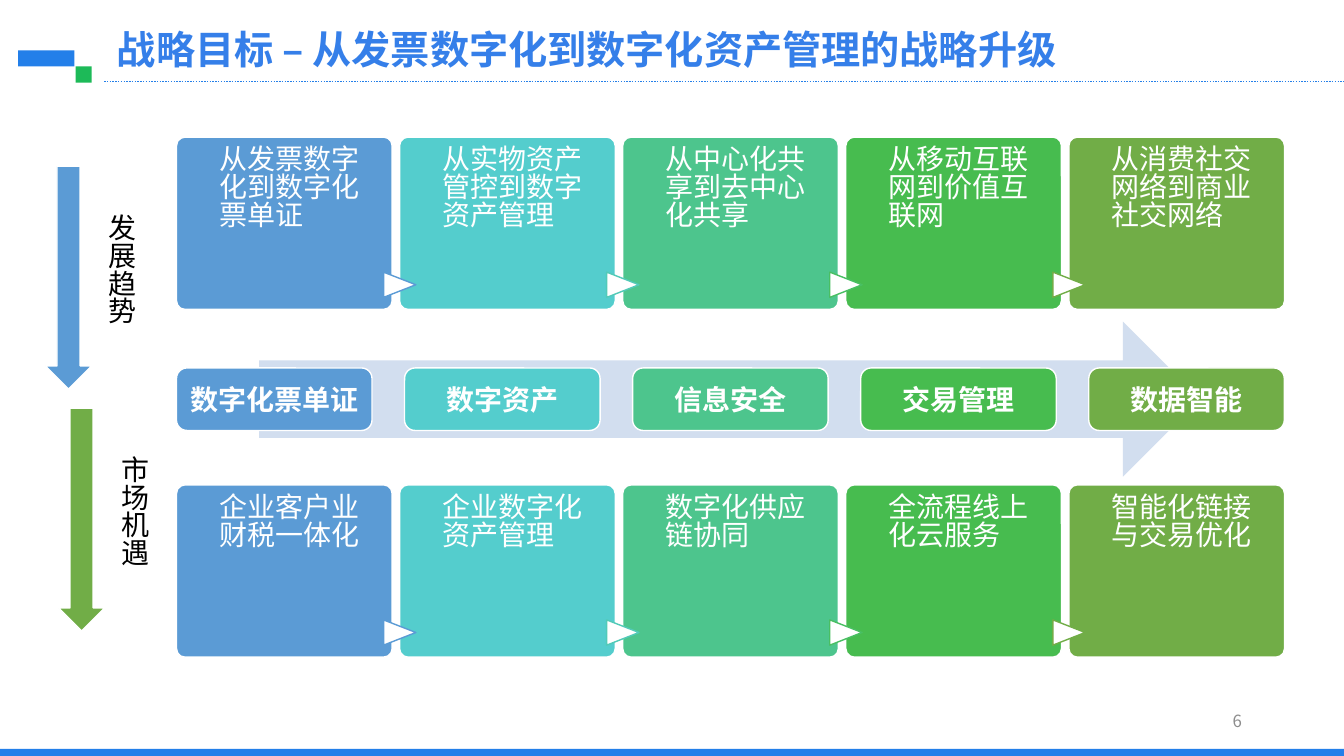
from dataclasses import dataclass
from typing import Optional

from lxml.etree import SubElement
from pptx import Presentation
from pptx.dml.color import RGBColor
from pptx.enum.dml import MSO_LINE_DASH_STYLE as Dash
from pptx.enum.shapes import MSO_CONNECTOR as Connector
from pptx.enum.shapes import MSO_SHAPE as Shape
from pptx.enum.text import MSO_ANCHOR as Anchor
from pptx.enum.text import MSO_AUTO_SIZE as AutoSize
from pptx.enum.text import PP_ALIGN as Align
from pptx.oxml.ns import qn
from pptx.util import Inches, Pt

FONT = "Noto Sans CJK SC"
COLORS = {
    "title": "357FE9", "brand": "237FE9", "accent": "1DBA58",
    "white": "FFFFFF", "black": "000000", "number": "8C8C8C", "band": "D2DEEF",
    "blue": "5B9BD5", "aqua": "54CDCD", "mint": "4DC58D",
    "green": "47BC4F", "olive": "71AD47",
}
MARKER_LINES = ["5B9BD5", "52CAB8", "49BF63", "71AD47"]
GRID_LEFT = 13.13
CARD_PITCH = 16.6
PILL_PITCH = 16.97

deck = Presentation()
deck.slide_width, deck.slide_height = Inches(13.333), Inches(7.5)
slide = deck.slides.add_slide(deck.slide_layouts[5])


@dataclass
class Area:
    """Position and size in percent of the slide."""
    left: float
    top: float
    width: float
    height: float

    def emu(self) -> list[int]:
        sides = [deck.slide_width, deck.slide_height] * 2
        shares = [self.left, self.top, self.width, self.height]
        return [round(side * share / 100) for side, share in zip(sides, shares)]


@dataclass
class Theme:
    color: str
    trend: str
    focus: str
    chance: str


@dataclass
class Stage:
    label: str
    color: str
    left: float
    top: float


THEMES = [
    Theme("blue", "从发票数字化到数字化票单证", "数字化票单证", "企业客户业财税一体化"),
    Theme("aqua", "从实物资产管控到数字资产管理", "数字资产", "企业数字化资产管理"),
    Theme("mint", "从中心化共享到去中心化共享", "信息安全", "数字化供应链协同"),
    Theme("green", "从移动互联网到价值互联网", "交易管理", "全流程线上化云服务"),
    Theme("olive", "从消费社交网络到商业社交网络", "数据智能", "智能化链接与交易优化"),
]
STAGES = [Stage("发展趋势", "blue", 3.38, 22), Stage("市场机遇", "olive", 4.35, 54)]


def write(box, text: str, *, size: float = 20, color: str = "white", bold: bool = False,
          align=Align.LEFT, anchor=Anchor.MIDDLE, spacing: float = 1.0,
          insets: tuple = (7.2, 3.6, 7.2, 3.6)) -> None:
    frame = box.text_frame
    frame.auto_size = AutoSize.NONE
    frame.word_wrap = True
    frame.vertical_anchor = anchor
    (frame.margin_left, frame.margin_top,
     frame.margin_right, frame.margin_bottom) = map(Pt, insets)
    para = frame.paragraphs[0]
    para.alignment = align
    para.line_spacing = spacing
    span = para.add_run()
    span.text = text
    span.font.name = FONT
    span.font.size = Pt(size)
    span.font.bold = bold
    span.font.color.rgb = RGBColor.from_string(COLORS[color])
    SubElement(span.font._element, qn("a:ea")).set("typeface", FONT)


def draw(kind, area: Area, fill: str, line: Optional[str] = None):
    box = slide.shapes.add_shape(kind, *area.emu())
    box.shadow.inherit = False
    box.fill.solid()
    box.fill.fore_color.rgb = RGBColor.from_string(COLORS[fill])
    if line:
        box.line.color.rgb = RGBColor.from_string(line)
        box.line.width = Pt(1)
    else:
        box.line.fill.background()
    return box


def add_text(area: Area, text: str, **style) -> None:
    write(slide.shapes.add_textbox(*area.emu()), text, **style)


def draw_header() -> None:
    draw(Shape.RECTANGLE, Area(0, 99.07, 100, 0.93), "brand")
    draw(Shape.RECTANGLE, Area(1.35, 6.67, 4.2, 2.13), "brand")
    draw(Shape.RECTANGLE, Area(5.63, 8.8, 1.2, 2.13), "accent")
    left, top, width, _ = Area(7.75, 10.8, 92.25, 0).emu()
    rule = slide.shapes.add_connector(Connector.STRAIGHT, left, top, left + width, top)
    rule.line.color.rgb = RGBColor.from_string(COLORS["brand"])
    rule.line.width = Pt(1)
    rule.line.dash_style = Dash.ROUND_DOT
    SubElement(rule._element.spPr, qn("a:effectLst"))
    title = slide.shapes.title
    title.left, title.top, title.width, title.height = Area(7.95, 1.47, 78.3, 10.8).emu()
    write(title, "战略目标 – 从发票数字化到数字化资产管理的战略升级",
          size=28, color="title", bold=True, spacing=0.9)


def draw_stage(stage: Stage) -> None:
    draw(Shape.DOWN_ARROW, Area(stage.left, stage.top, 3.45, 29.47),
         stage.color, COLORS["white"])
    add_text(Area(stage.left + 3.52, stage.top, 5.78, 29.47), stage.label,
             color="black", spacing=0.83, insets=(11.5, 3, 11.5, 11.5))


def draw_pills() -> None:
    draw(Shape.RIGHT_ARROW, Area(19.28, 42.53, 70.05, 20.53), "band")
    for column, theme in enumerate(THEMES):
        area = Area(GRID_LEFT + column * PILL_PITCH, 48.67, 14.55, 8.27)
        pill = draw(Shape.ROUNDED_RECTANGLE, area, theme.color, COLORS["white"])
        write(pill, theme.focus, bold=True, align=Align.CENTER, insets=(3, 3, 3, 3))


def draw_cards(texts: list[str], top: float) -> None:
    for column, (theme, text) in enumerate(zip(THEMES, texts)):
        area = Area(GRID_LEFT + column * CARD_PITCH, top, 16.05, 22.8)
        card = draw(Shape.ROUNDED_RECTANGLE, area, theme.color, COLORS["white"])
        card.adjustments[0] = 0.05
        write(card, text, anchor=Anchor.TOP, spacing=0.83, insets=(28.8, 5.4, 7.2, 0))
    for column, line in enumerate(MARKER_LINES):
        area = Area(28.8 + column * CARD_PITCH, top + 17.4, 1.88, 4.27)
        marker = draw(Shape.FLOWCHART_EXTRACT, area, "white", line)
        marker.rotation = 90


def main() -> None:
    draw_header()
    for stage in STAGES:
        draw_stage(stage)
    draw_pills()
    draw_cards([theme.chance for theme in THEMES], 64.13)
    draw_cards([theme.trend for theme in THEMES], 18.13)
    add_text(Area(70.65, 92.67, 22.5, 5.33), "6", size=12, color="number", align=Align.RIGHT)
    deck.save("out.pptx")


if __name__ == "__main__":
    main()
